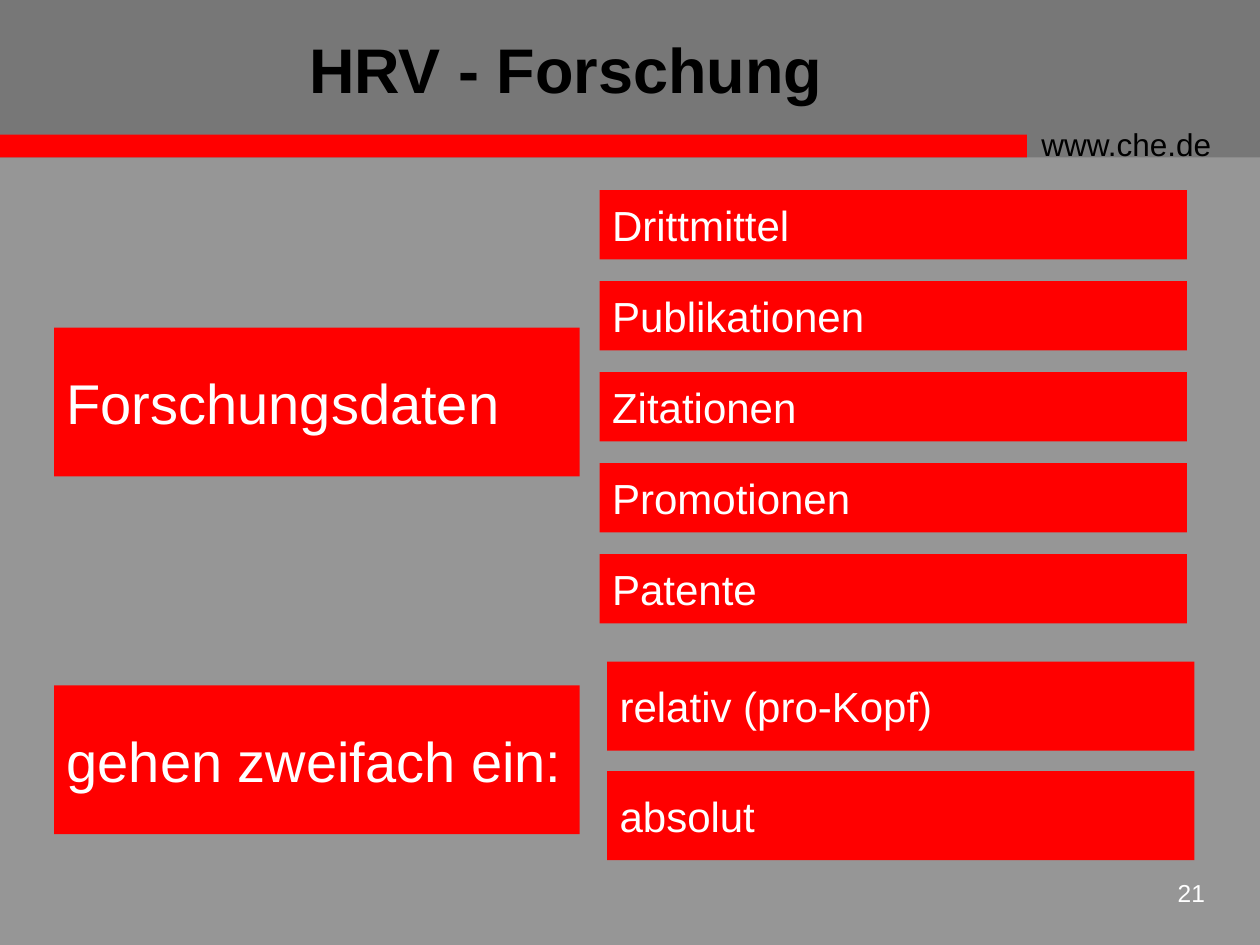
import pptx
import pptx.util
from pptx.dml.color import RGBColor
from pptx.enum.shapes import MSO_SHAPE
from pptx.enum.text import MSO_ANCHOR, PP_ALIGN

Pt = pptx.util.Pt

TITLE = "HRV - Forschung"
SITE = "www.che.de"
PAGE = "21"

# Labels on the left: text, top
TOPICS = [("Forschungsdaten", 187.2), ("gehen zweifach ein:", 391.7)]

# Stacks on the right: left, top, bar height, step, labels
STACKS = [
    (342.7, 108.7, 39.6, 52,
     ["Drittmittel", "Publikationen", "Zitationen", "Promotionen", "Patente"]),
    (347, 378, 51, 62.6, ["relativ (pro-Kopf)", "absolut"]),
]

THEME = {
    "font": "Arial",
    "background": RGBColor(0x96, 0x96, 0x96),
    "header": RGBColor(0x77, 0x77, 0x77),
    "accent": RGBColor(0xFF, 0x00, 0x00),
    "dark": RGBColor(0x00, 0x00, 0x00),
    "light": RGBColor(0xFF, 0xFF, 0xFF),
    "title": 36, "topic": 32, "item": 24, "site": 18, "page": 14,
}


def write(sp, text, size, color, align=PP_ALIGN.LEFT,
          anchor=MSO_ANCHOR.MIDDLE, wrap=True, bold=False):
    tf = sp.text_frame
    tf.word_wrap = wrap
    tf.vertical_anchor = anchor
    p = tf.paragraphs[0]
    p.alignment = align
    r = p.add_run()
    r.text = text
    r.font.name = THEME["font"]
    r.font.size = Pt(THEME[size])
    r.font.bold = bold
    r.font.color.rgb = THEME[color]


def add_box(s, left, top, width, height, fill):
    sp = s.shapes.add_shape(MSO_SHAPE.RECTANGLE,
                            Pt(left), Pt(top), Pt(width), Pt(height))
    sp.shadow.inherit = False
    sp.fill.solid()
    sp.fill.fore_color.rgb = THEME[fill]
    sp.line.fill.background()
    return sp


def add_text(s, left, top, width, height, *args, **kwargs):
    sp = s.shapes.add_textbox(Pt(left), Pt(top), Pt(width), Pt(height))
    write(sp, *args, **kwargs)


def main():
    prs = pptx.Presentation()
    prs.slide_width, prs.slide_height = Pt(720), Pt(540)
    s = prs.slides.add_slide(prs.slide_layouts[6])
    s.background.fill.solid()
    s.background.fill.fore_color.rgb = THEME["background"]

    add_box(s, 0, 0, 720, 90, "header")
    add_box(s, 0, 77, 586.8, 13, "accent")
    add_text(s, 588, 67.7, 126, 28.8, SITE, "site", "dark",
             anchor=MSO_ANCHOR.TOP)
    add_text(s, 653.8, 498.2, 41.8, 30.2, PAGE, "page", "light",
             align=PP_ALIGN.RIGHT, anchor=MSO_ANCHOR.TOP)

    for text, top in TOPICS:
        sp = add_box(s, 31, top, 300.2, 85, "accent")
        write(sp, text, "topic", "light", wrap=False)

    for left, top, height, step, labels in STACKS:
        for i, text in enumerate(labels):
            sp = add_box(s, left, top + i * step, 335.5, height, "accent")
            write(sp, text, "item", "light", wrap=False)

    add_text(s, 64.8, 0, 517, 77.8, TITLE, "title", "dark",
             align=PP_ALIGN.CENTER, bold=True)
    prs.save("out.pptx")


if __name__ == "__main__":
    main()
